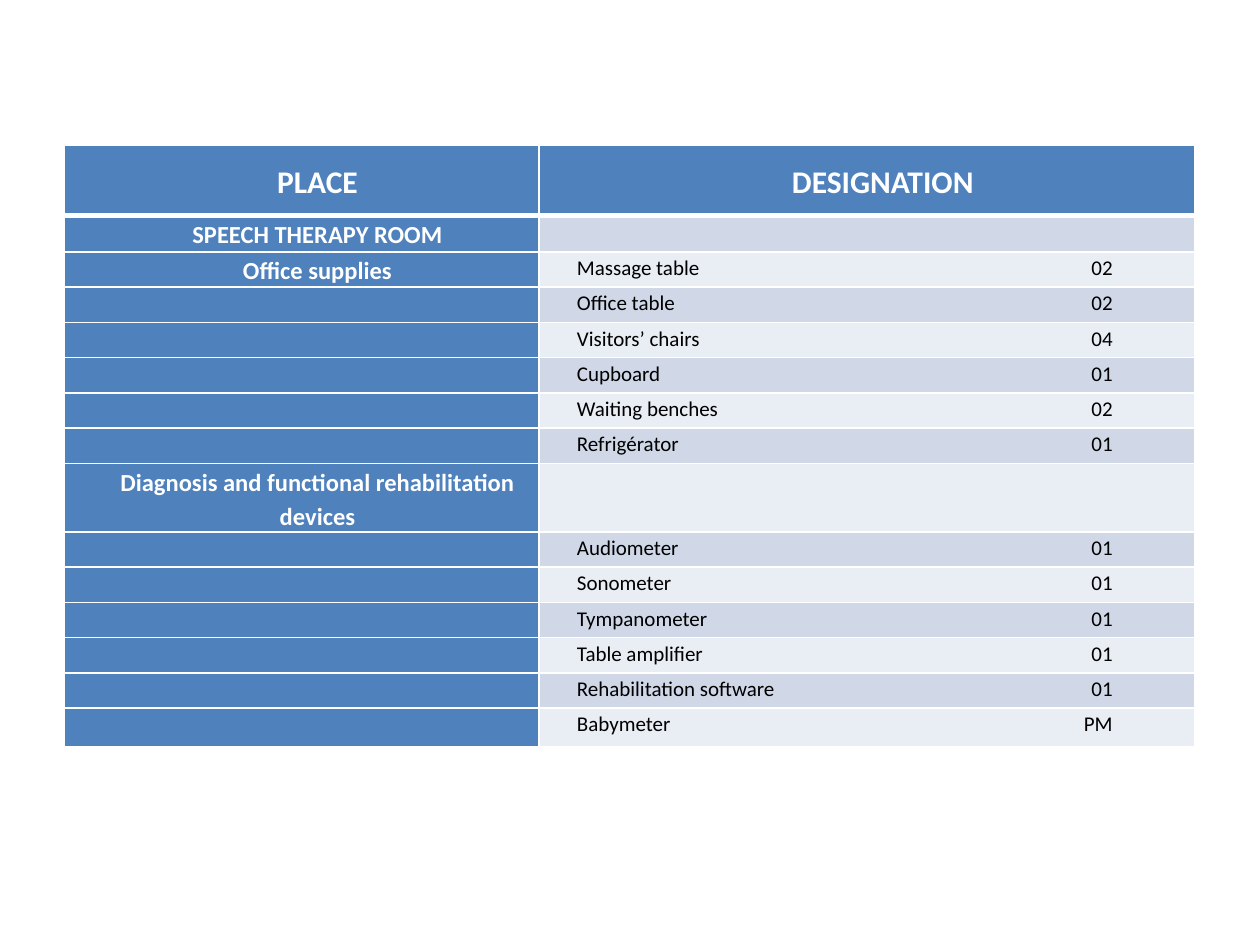
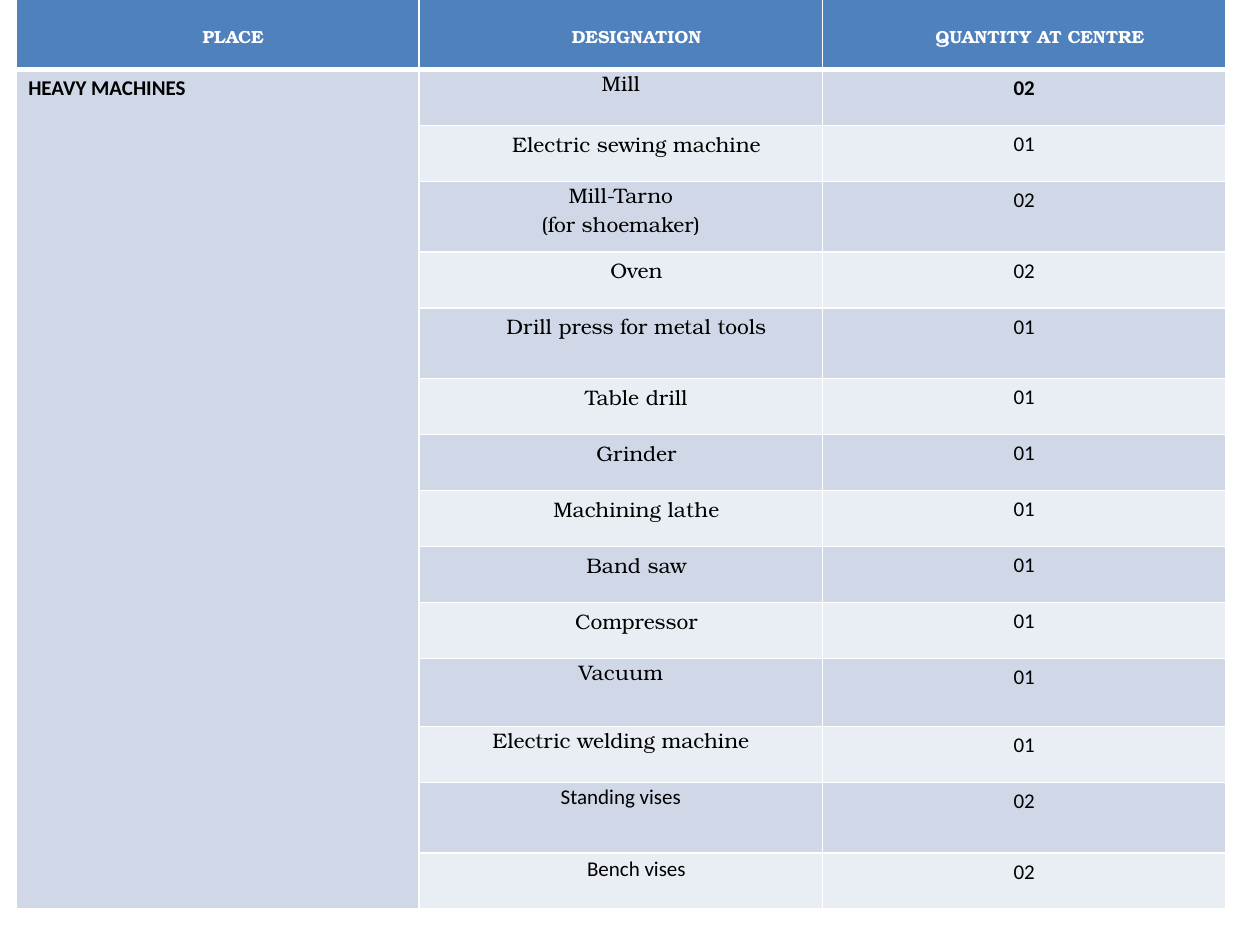
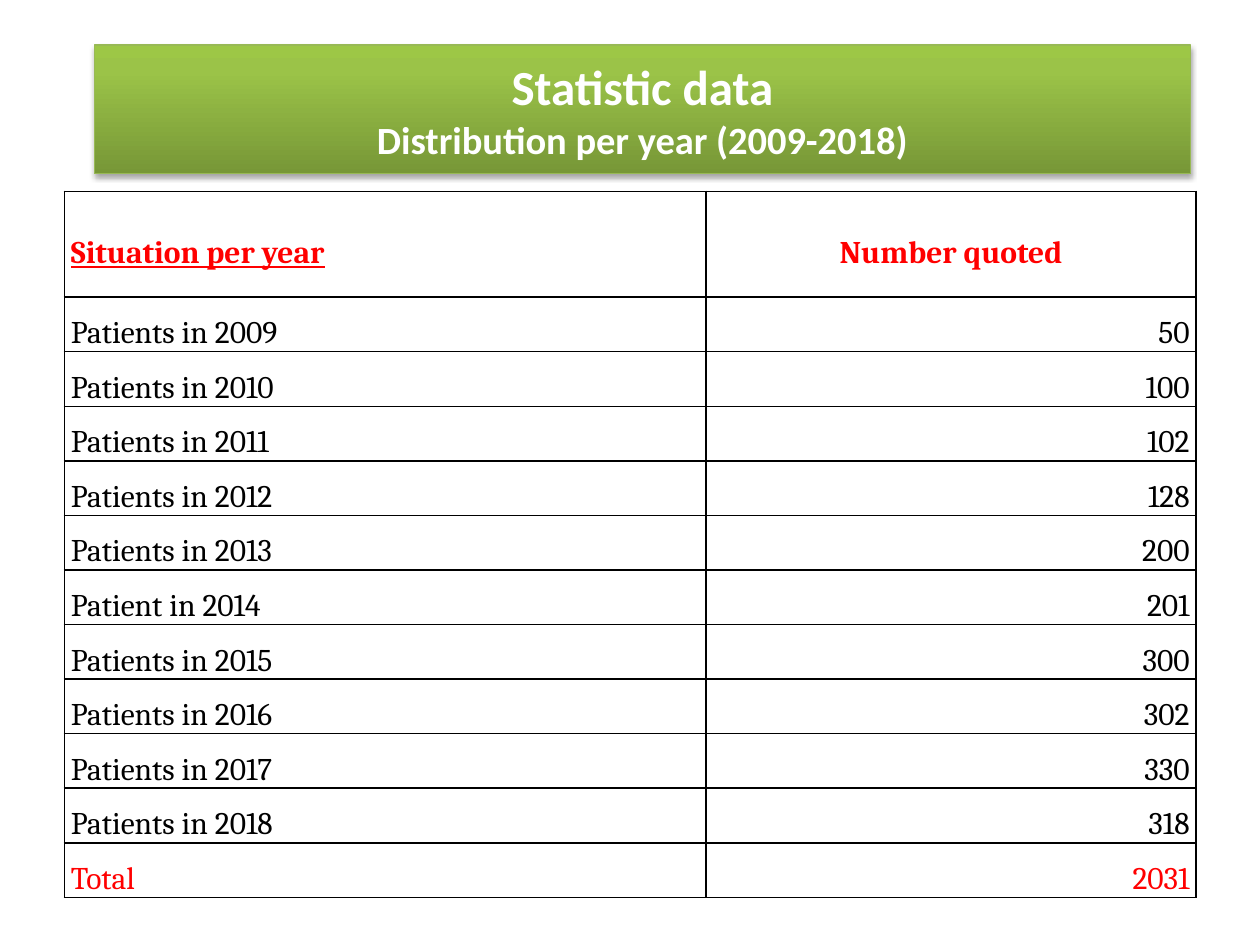
from dataclasses import dataclass, replace

from lxml.etree import SubElement
from pptx import Presentation
from pptx.dml.color import RGBColor
from pptx.enum.text import MSO_ANCHOR as Anchor, MSO_AUTO_SIZE as AutoSize, PP_ALIGN as Align
from pptx.oxml import parse_xml
from pptx.oxml.ns import nsdecls, qn
from pptx.util import Cm, Pt

WHITE, BLACK, RED, BLUE = "FFFFFF", "000000", "FF0000", "4F81BD"
BANDS = ("D0D8E8", "E9EDF4")
SERIF = "TeX Gyre Bonum"
NO_TABLE_STYLE = "{2D5ABB26-0587-4C30-8999-92F81FD0307C}"
TITLE_ONLY, BLANK = 5, 6


@dataclass(frozen=True)
class CellStyle:
    font: str = "Calibri"
    size: float = 12
    colour: str = BLACK
    bold: bool = False
    underline: bool = False
    align: Align = Align.LEFT
    anchor: Anchor = Anchor.TOP
    side: float = 0.13
    indent: float = 0
    top: float = 0
    spacing: float = 1
    tab: float = 0
    fill: str = ""


def rgb(colour):
    return RGBColor.from_string(colour)


class Deck:
    def __init__(self):
        self.deck = Presentation()
        self.deck.slide_width, self.deck.slide_height = Cm(25.4), Cm(19.05)
        self.page = None

    def add_page(self, layout=BLANK):
        self.page = self.deck.slides.add_slide(self.deck.slide_layouts[layout])

    def set_font(self, paragraph, name, size, colour, bold):
        font = paragraph.font
        font.name, font.size, font.bold = name, Pt(size), bold
        font.color.rgb = rgb(colour)

    def add_title(self, lines, left, top, width, height):
        title = self.page.shapes.title
        title.left, title.top, title.width, title.height = map(Cm, (left, top, width, height))
        stops = "".join(
            f'<a:gs pos="{position * 1000}"><a:srgbClr val="{colour}"/></a:gs>'
            for position, colour in ((0, "779737"), (80, "9BC348"), (100, "9DC746")))
        properties = title.element.spPr
        properties.append(parse_xml(
            f'<a:gradFill {nsdecls("a")} rotWithShape="1"><a:gsLst>{stops}</a:gsLst>'
            '<a:lin ang="16200000" scaled="0"/></a:gradFill>'))
        title.line.color.rgb = rgb("98B955")
        title.line.width = Pt(0.75)
        properties.append(parse_xml(
            f'<a:effectLst {nsdecls("a")}><a:outerShdw blurRad="{Pt(3.1)}" dist="{Pt(1.8)}" '
            f'dir="5400000" rotWithShape="0"><a:srgbClr val="{BLACK}"><a:alpha val="35000"/>'
            '</a:srgbClr></a:outerShdw></a:effectLst>'))
        frame = title.text_frame
        frame.text = "\n".join(text for text, _ in lines)
        frame.word_wrap, frame.auto_size = True, AutoSize.NONE
        frame.vertical_anchor = Anchor.MIDDLE
        frame.margin_left = frame.margin_right = frame.margin_top = frame.margin_bottom = Cm(0.1)
        for paragraph, (_, size) in zip(frame.paragraphs, lines):
            paragraph.alignment = Align.CENTER
            self.set_font(paragraph, "Calibri", size, WHITE, True)

    def add_table(self, left, top, widths, heights, rows, line, header_line=1):
        frame = self.page.shapes.add_table(
            len(heights), len(widths), Cm(left), Cm(top), Cm(sum(widths)), Cm(sum(heights)))
        table = frame.table
        table.first_row = table.horz_banding = False
        table._tbl.tblPr.find(qn("a:tableStyleId")).text = NO_TABLE_STYLE
        for column, width in zip(table.columns, widths):
            column.width = Cm(width)
        for row, height in zip(table.rows, heights):
            row.height = Cm(height)
        for row_index, row in enumerate(rows):
            borders = {"L": 1, "R": 1,
                       "T": header_line if row_index == 1 else 1,
                       "B": header_line if row_index == 0 else 1}
            for column_index, (text, style) in enumerate(row):
                cell = table.cell(row_index, column_index)
                self.set_borders(cell, borders, line)
                self.fill_cell(cell, text, style)
        return table

    def set_borders(self, cell, borders, colour):
        properties = cell._tc.get_or_add_tcPr()
        for side, width in borders.items():
            edge = SubElement(properties, qn(f"a:ln{side}"), w=str(Pt(width)))
            SubElement(SubElement(edge, qn("a:solidFill")), qn("a:srgbClr"), val=colour)

    def fill_cell(self, cell, text, style):
        if style.fill:
            cell.fill.solid()
            cell.fill.fore_color.rgb = rgb(style.fill)
        cell.margin_left, cell.margin_right = Cm(style.side + style.indent), Cm(style.side)
        cell.margin_top = cell.margin_bottom = Cm(style.top)
        cell.vertical_anchor = style.anchor
        cell.text = text
        for paragraph in cell.text_frame.paragraphs:
            paragraph.alignment, paragraph.line_spacing = style.align, style.spacing
            if style.tab:
                tabs = SubElement(paragraph._p.get_or_add_pPr(), qn("a:tabLst"))
                SubElement(tabs, qn("a:tab"), pos=str(Cm(style.tab)), algn="r")
            self.set_font(paragraph, style.font, style.size, style.colour, style.bold)
            if style.underline:
                paragraph.font.underline = True

    def save(self):
        self.deck.save("out.pptx")


def add_speech_room(deck):
    deck.add_page()
    place = CellStyle(size=14, colour=WHITE, bold=True, align=Align.CENTER,
                      indent=0.63, spacing=1.15, fill=BLUE)
    header = replace(place, size=18, anchor=Anchor.MIDDLE)
    empty_place = replace(place, size=12)
    item = CellStyle(indent=0.63, spacing=1.15, tab=10.8)
    sections = (
        ("SPEECH THERAPY ROOM", ()),
        ("Office supplies", (
            ("Massage table", "02"), ("Office table", "02"), ("Visitors’ chairs", "04"),
            ("Cupboard", "01"), ("Waiting benches", "02"), ("Refrigérator", "01"))),
        ("Diagnosis and functional rehabilitation devices", (
            ("", ""), ("Audiometer", "01"), ("Sonometer", "01"), ("Tympanometer", "01"),
            ("Table amplifier", "01"), ("Rehabilitation software", "01"), ("Babymeter", "PM"))),
    )
    rows = [(("PLACE", header), ("DESIGNATION", header))]
    for name, items in sections:
        for index, (label, quantity) in enumerate(items or (("", ""),)):
            first = (name, place) if index == 0 else ("", empty_place)
            text = f"{label}\t{quantity}" if label else ""
            rows.append((first, (text, replace(item, fill=BANDS[(len(rows) - 1) % 2]))))
    heights = [1.42, 0.74] + [0.71] * 6 + [1.37] + [0.71] * 5 + [0.79]
    deck.add_table(1.3, 2.92, (9.57, 13.22), heights, rows, WHITE, header_line=3)


def add_heavy_machines(deck):
    deck.add_page()
    plain = CellStyle(font=SERIF, align=Align.CENTER, side=0.18)
    indented = replace(plain, indent=0.63, spacing=1.15)
    header = replace(indented, size=10, colour=WHITE, bold=True, anchor=Anchor.MIDDLE, fill=BLUE)
    quantity_style = CellStyle(align=Align.CENTER, side=0.25, top=0.13)
    place = replace(quantity_style, align=Align.LEFT, bold=True, fill=BANDS[0])
    standing = CellStyle(align=Align.CENTER, spacing=1.07)
    bench = replace(standing, indent=0.63, spacing=1.15)
    low, middle, high = 1.13, 1.37, 1.42
    machines = (
        ("Mill", "02", plain, low),
        ("Electric sewing machine", "01", indented, low),
        ("Mill-Tarno\n(for shoemaker)", "02", plain, high),
        ("Oven", "02", indented, low),
        ("Drill press for metal tools", "01", indented, high),
        ("Table drill", "01", indented, low),
        ("Grinder", "01", indented, low),
        ("Machining lathe", "01", indented, low),
        ("Band saw", "01", indented, low),
        ("Compressor", "01", indented, low),
        ("Vacuum", "01", plain, middle),
        ("Electric welding machine", "01", plain, low),
        ("Standing vises", "02", standing, high),
        ("Bench vises", "02", bench, low),
    )
    rows = [[(text, header) for text in ("PLACE", "DESIGNATION", "QUANTITY AT CENTRE")]]
    for index, (name, quantity, style, _) in enumerate(machines):
        band = BANDS[index % 2]
        rows.append((
            ("" if index else "HEAVY MACHINES", place),
            (name, replace(style, fill=band)),
            (quantity, replace(quantity_style, bold=index == 0, fill=band))))
    heights = [high] + [height for *_, height in machines]
    table = deck.add_table(0.32, -0.02, (8.13,) * 3, heights, rows, WHITE, header_line=3)
    table.cell(1, 0).merge(table.cell(len(machines), 0))


def add_statistics(deck):
    deck.add_page(TITLE_ONLY)
    deck.add_title((("Statistic data", 28), ("Distribution per year (2009-2018)", 22)),
                   1.9, 0.91, 22.1, 2.59)
    label = CellStyle(font="Cambria", size=18, anchor=Anchor.MIDDLE, spacing=1.5)
    number = replace(label, align=Align.RIGHT)
    header = replace(label, colour=RED, bold=True)
    patients = (50, 100, 102, 128, 200, 201, 300, 302, 330, 318)
    rows = [(("Situation per year", replace(header, underline=True)),
             ("Number quoted", replace(header, align=Align.CENTER)))]
    for year, count in enumerate(patients, 2009):
        noun = "Patient" if year == 2014 else "Patients"
        rows.append(((f"{noun} in {year}", label), (str(count), number)))
    rows.append((("Total", replace(label, colour=RED)),
                 (str(sum(patients)), replace(number, colour=RED))))
    heights = [2.13] + [1.1] * (len(rows) - 1)
    deck.add_table(1.3, 3.86, (12.93, 9.88), heights, rows, BLACK)


def main():
    deck = Deck()
    add_speech_room(deck)
    add_heavy_machines(deck)
    add_statistics(deck)
    deck.save()


if __name__ == "__main__":
    main()
